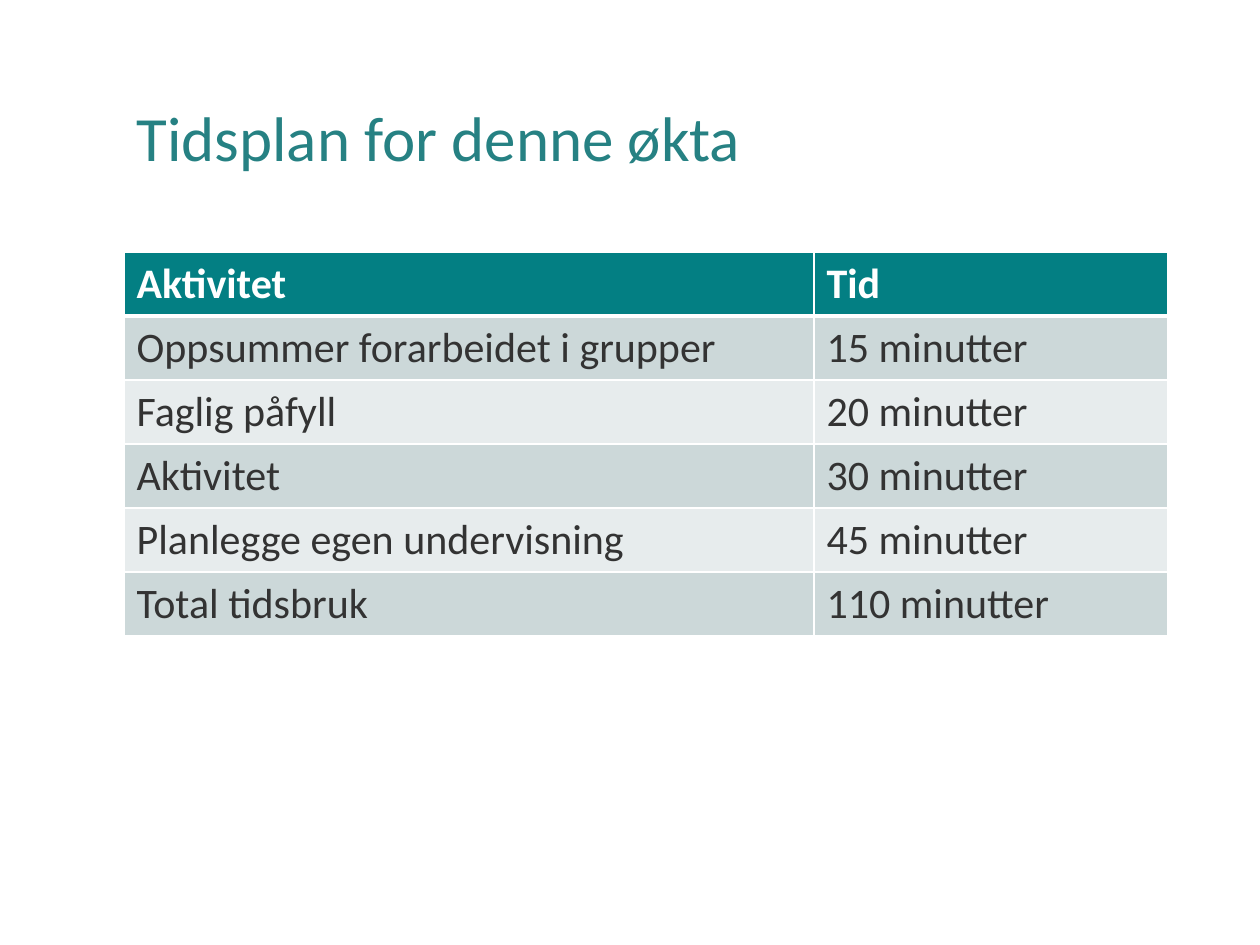
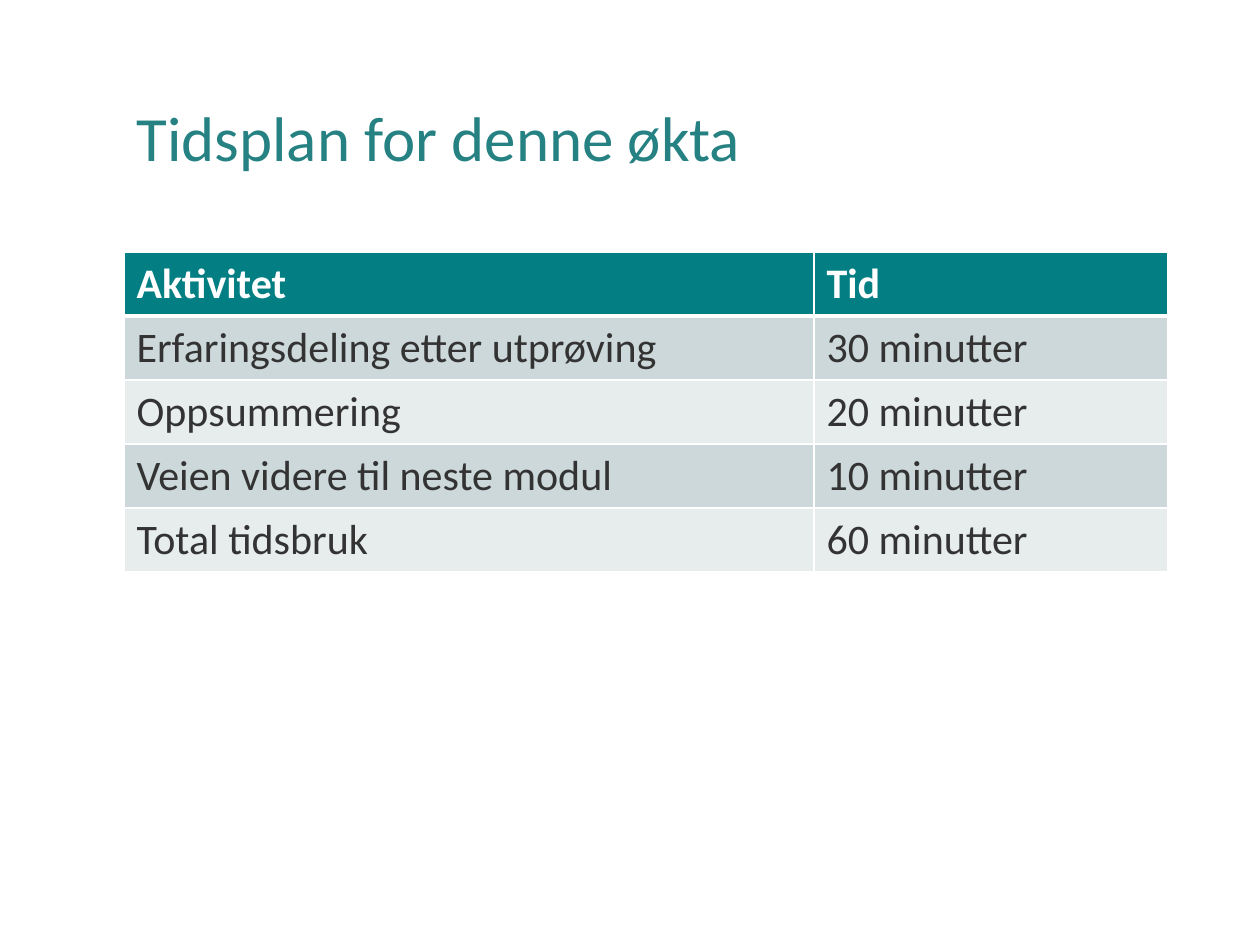
from dataclasses import dataclass

from lxml.etree import SubElement
from pptx import Presentation
from pptx.dml.color import RGBColor
from pptx.enum.text import MSO_ANCHOR, PP_ALIGN
from pptx.oxml.ns import qn
from pptx.util import Emu, Pt

PX_PER_INCH = 126


@dataclass(frozen=True)
class Theme:
    font: str = "Calibri"
    title: str = "268183"
    header: str = "037F83"
    bands: tuple = ("CCD8D9", "E7ECED")
    body: str = "333333"
    white: str = "FFFFFF"
    title_size: int = 36
    table_size: int = 24
    border: int = 1
    header_border: int = 3


THEME = Theme()

# Shared layout, in px
LEFT, WIDTH = 124, 1044
TITLE_TOP, TITLE_HEIGHT = 50, 183
TABLE_TOP, ROW_HEIGHT = 252, 64
COLUMNS = (690, 354)

TITLE = "Tidsplan for denne økta"
HEADER = ("Aktivitet", "Tid")
SCHEDULES = (
    (
        ("Oppsummer forarbeidet i grupper", "15 minutter"),
        ("Faglig påfyll", "20 minutter"),
        ("Aktivitet", "30 minutter"),
        ("Planlegge egen undervisning", "45 minutter"),
        ("Total tidsbruk", "110 minutter"),
    ),
    (
        ("Erfaringsdeling etter utprøving", "30 minutter"),
        ("Oppsummering", "20 minutter"),
        ("Veien videre til neste modul", "10 minutter"),
        ("Total tidsbruk", "60 minutter"),
    ),
)


def px(value):
    return Emu(round(value * 914400 / PX_PER_INCH))


def set_text(tf, text, *, size, color, bold=False, spacing=1.0):
    p = tf.paragraphs[0]
    p.alignment = PP_ALIGN.LEFT
    p.line_spacing = spacing
    r = p.add_run()
    r.text = text
    r.font.name = THEME.font
    r.font.size = Pt(size)
    r.font.bold = bold
    r.font.color.rgb = RGBColor.from_string(color)


def set_borders(cell, *, top, bottom):
    tc_pr = cell._tc.get_or_add_tcPr()
    widths = {"lnL": THEME.border, "lnR": THEME.border, "lnT": top, "lnB": bottom}
    for tag, width in widths.items():
        ln = SubElement(tc_pr, qn(f"a:{tag}"), w=str(Pt(width)))
        fill = SubElement(ln, qn("a:solidFill"))
        SubElement(fill, qn("a:srgbClr"), val=THEME.white)


def add_title(s, text):
    sp = s.shapes.title
    sp.left, sp.top = px(LEFT), px(TITLE_TOP)
    sp.width, sp.height = px(WIDTH), px(TITLE_HEIGHT)
    sp.text_frame.vertical_anchor = MSO_ANCHOR.MIDDLE
    set_text(sp.text_frame, text, size=THEME.title_size, color=THEME.title, spacing=0.9)


def format_cell(cell, text, row):
    is_header = row == 0
    # The header and the first body row share the thick rule
    set_borders(
        cell,
        top=THEME.header_border if row == 1 else THEME.border,
        bottom=THEME.header_border if is_header else THEME.border,
    )
    fill = THEME.header if is_header else THEME.bands[(row - 1) % 2]
    cell.fill.solid()
    cell.fill.fore_color.rgb = RGBColor.from_string(fill)
    set_text(
        cell.text_frame,
        text,
        size=THEME.table_size,
        color=THEME.white if is_header else THEME.body,
        bold=is_header,
    )


def add_schedule(s, activities):
    rows = (HEADER, *activities)
    frame = s.shapes.add_table(
        len(rows), len(COLUMNS),
        px(LEFT), px(TABLE_TOP), px(WIDTH), px(ROW_HEIGHT * len(rows)),
    )
    table = frame.table
    for column, width in zip(table.columns, COLUMNS):
        column.width = px(width)
    for i, values in enumerate(rows):
        table.rows[i].height = px(ROW_HEIGHT)
        for j, text in enumerate(values):
            format_cell(table.cell(i, j), text, i)


def main():
    prs = Presentation()
    prs.slide_width, prs.slide_height = px(1260), px(945)
    title_only = prs.slide_layouts[5]
    # One slide per session
    for activities in SCHEDULES:
        s = prs.slides.add_slide(title_only)
        add_title(s, TITLE)
        add_schedule(s, activities)
    prs.save("out.pptx")


if __name__ == "__main__":
    main()
